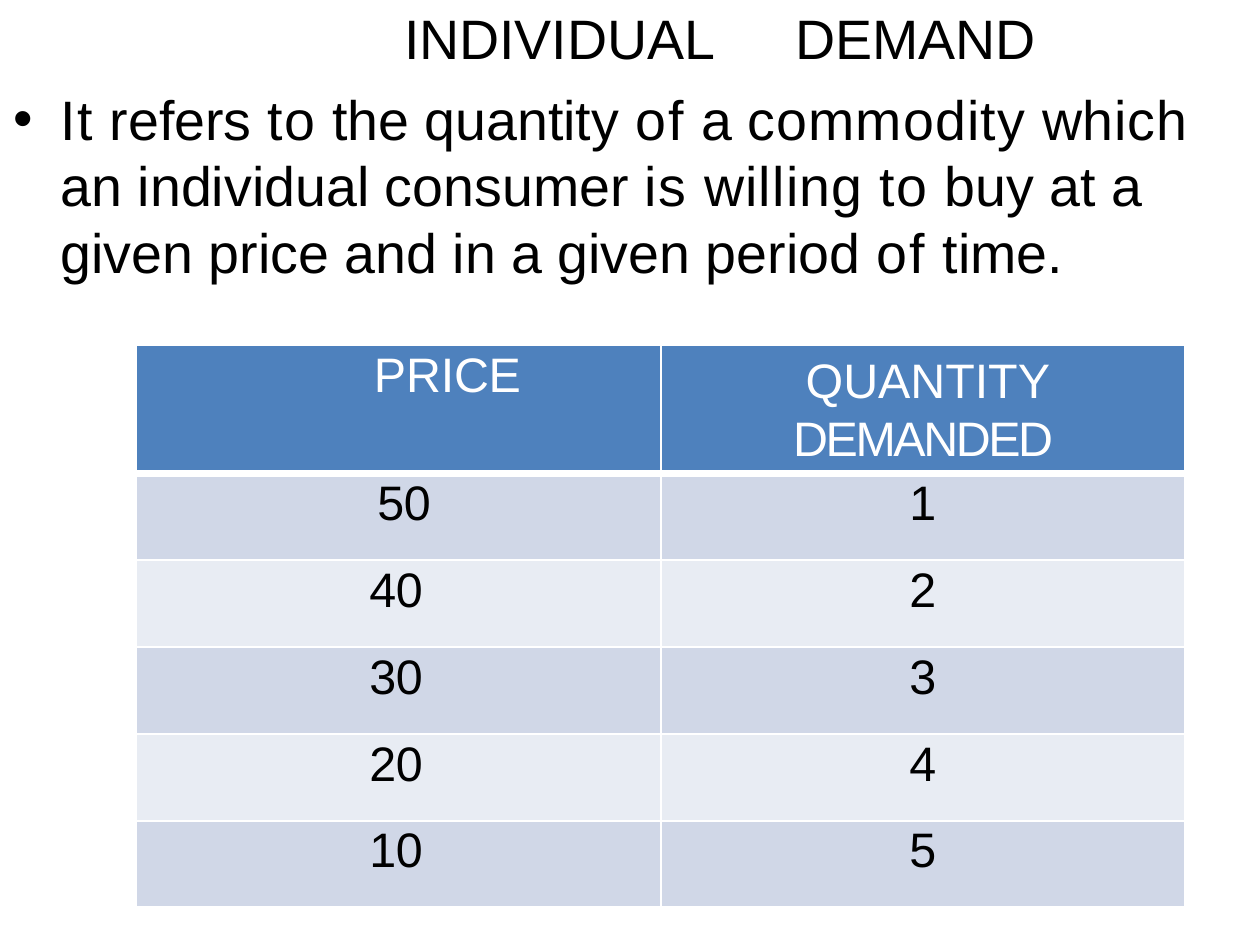
from dataclasses import dataclass

from lxml import etree
from pptx import Presentation
from pptx.dml.color import RGBColor
from pptx.enum.text import MSO_AUTO_SIZE, PP_ALIGN
from pptx.oxml.ns import qn
from pptx.util import Pt

CENTER = PP_ALIGN.CENTER
LEFT = PP_ALIGN.LEFT
FIT = MSO_AUTO_SIZE.SHAPE_TO_FIT_TEXT


@dataclass(frozen=True)
class Theme:
    font: str = "Arial"
    body: float = 35
    cell: float = 30.5
    ink: str = "000000"
    white: str = "FFFFFF"
    head: str = "4E81BD"
    bands: tuple = ("D0D7E7", "E8ECF3")
    thin: float = 1.5
    thick: float = 4.5


@dataclass(frozen=True)
class Span:
    text: str
    gap: float = 0  # letter spacing


@dataclass(frozen=True)
class Para:
    spans: tuple
    size: float
    color: str
    before: float
    left: float = 0
    first: float = 0
    align: PP_ALIGN = LEFT
    pitch: float | None = None
    tab: float | None = None
    step: float | None = None  # default tab distance
    bullet: str | None = None


THEME = Theme()

TITLE = Para((Span("INDIVIDUAL\tDEMAND", -0.1),), THEME.body, THEME.ink, 9.2,
             left=247.7, tab=453.6, step=246.2)
MEANING = Para(
    (Span("It", 0.9), Span(" refers "), Span("to", 0.9),
     Span(" the quantity "), Span("of", 1.4), Span(" a "),
     Span("commodity", 0.7), Span(" "), Span("which", 0.5),
     Span(" an individual consumer "), Span("is willing", 0.8),
     Span(" "), Span("to", 0.9), Span(" buy at "), Span("a", -0.5),
     Span(" given price and in a given period "), Span("of", 1.4),
     Span(" "), Span("time.", -0.1)),
    THEME.body, THEME.ink, 9.4, left=31, first=-29.5, pitch=41.9, tab=31,
    bullet="•")
PRICE = Para((Span("PRICE", -0.1),), THEME.cell, THEME.white, 2.1,
             left=61.9, align=CENTER)
DEMAND = Para((Span("QUANTITY "), Span("DEMANDED", -1.5)), THEME.cell,
              THEME.white, 3.5, left=83.5, first=7.9, pitch=36.4)
PAIRS = ((50, 1), (40, 2), (30, 3), (20, 4), (10, 5))


def write(para, data: Para) -> None:
    para.alignment = data.align
    para.space_before = Pt(data.before)
    if data.pitch:
        para.line_spacing = Pt(data.pitch)
    props = para._p.get_or_add_pPr()
    props.set("marL", str(Pt(data.left)))
    props.set("indent", str(Pt(data.first)))
    if data.step:
        props.set("defTabSz", str(Pt(data.step)))
    if data.bullet:
        etree.SubElement(props, qn("a:buSzPct"), val="100000")
        etree.SubElement(props, qn("a:buFont"), typeface=THEME.font)
        etree.SubElement(props, qn("a:buChar"), char=data.bullet)
    else:
        etree.SubElement(props, qn("a:buNone"))
    if data.tab:
        tabs = etree.SubElement(props, qn("a:tabLst"))
        etree.SubElement(tabs, qn("a:tab"), pos=str(Pt(data.tab)), algn="l")
    font = para.font
    font.name = THEME.font
    font.size = Pt(data.size)
    font.color.rgb = RGBColor.from_string(data.color)
    for span in data.spans:
        run = para.add_run()
        run.text = span.text
        run._r.get_or_add_rPr().set("spc", str(round(span.gap * 100)))


def edge(cell, side: str, width: float) -> None:
    props = cell._tc.get_or_add_tcPr()
    line = etree.SubElement(props, qn(f"a:ln{side}"), w=str(Pt(width)))
    fill = etree.SubElement(line, qn("a:solidFill"))
    etree.SubElement(fill, qn("a:srgbClr"), val=THEME.white)


def paint(cell, data: Para, color: str, top: float, base: float,
          inset: float = 2.2) -> None:
    """Fill a cell, with its edges before its colour as the schema asks."""
    cell.margin_left = cell.margin_right = cell.margin_bottom = 0
    cell.margin_top = Pt(inset)
    sides = {"L": THEME.thin, "R": THEME.thin, "T": top, "B": base}
    for side, width in sides.items():
        edge(cell, side, width)
    cell.fill.solid()
    cell.fill.fore_color.rgb = RGBColor.from_string(color)
    write(cell.text_frame.paragraphs[0], data)


def add_text(slide) -> None:
    box = slide.shapes.add_textbox(Pt(7.2), Pt(-7.2), Pt(742.3), Pt(186.5))
    frame = box.text_frame
    frame.word_wrap = True
    frame.auto_size = FIT
    frame.margin_left = frame.margin_right = frame.margin_bottom = 0
    frame.margin_top = Pt(9.4)
    write(frame.paragraphs[0], TITLE)
    write(frame.add_paragraph(), MEANING)


def add_grid(slide) -> None:
    table = slide.shapes.add_table(len(PAIRS) + 1, 2, Pt(85.8), Pt(217.6),
                                   Pt(661), Pt(354.4)).table
    for col in table.columns:
        col.width = Pt(330.5)
    for i, row in enumerate(table.rows):
        row.height = Pt(54.7 if i else 80.9)
    paint(table.cell(0, 0), PRICE, THEME.head, THEME.thin, THEME.thick)
    paint(table.cell(0, 1), DEMAND, THEME.head, THEME.thin, THEME.thick, 3.6)
    for i, (price, count) in enumerate(PAIRS):
        color = THEME.bands[i % 2]
        top = THEME.thin if i else THEME.thick
        left, align = (146.9, LEFT) if i else (7.2, CENTER)
        cost = Para((Span(str(price), -0.2),), THEME.cell, THEME.ink, 2.1,
                    left=left, align=align)
        need = Para((Span(str(count)),), THEME.cell, THEME.ink, 2.1,
                    align=CENTER)
        for j, data in enumerate((cost, need)):
            paint(table.cell(i + 1, j), data, color, top, THEME.thin)


def main() -> None:
    deck = Presentation()
    deck.slide_width, deck.slide_height = Pt(794), Pt(595)
    slide = deck.slides.add_slide(deck.slide_layouts[6])
    add_text(slide)
    add_grid(slide)
    deck.save("out.pptx")


if __name__ == "__main__":
    main()
